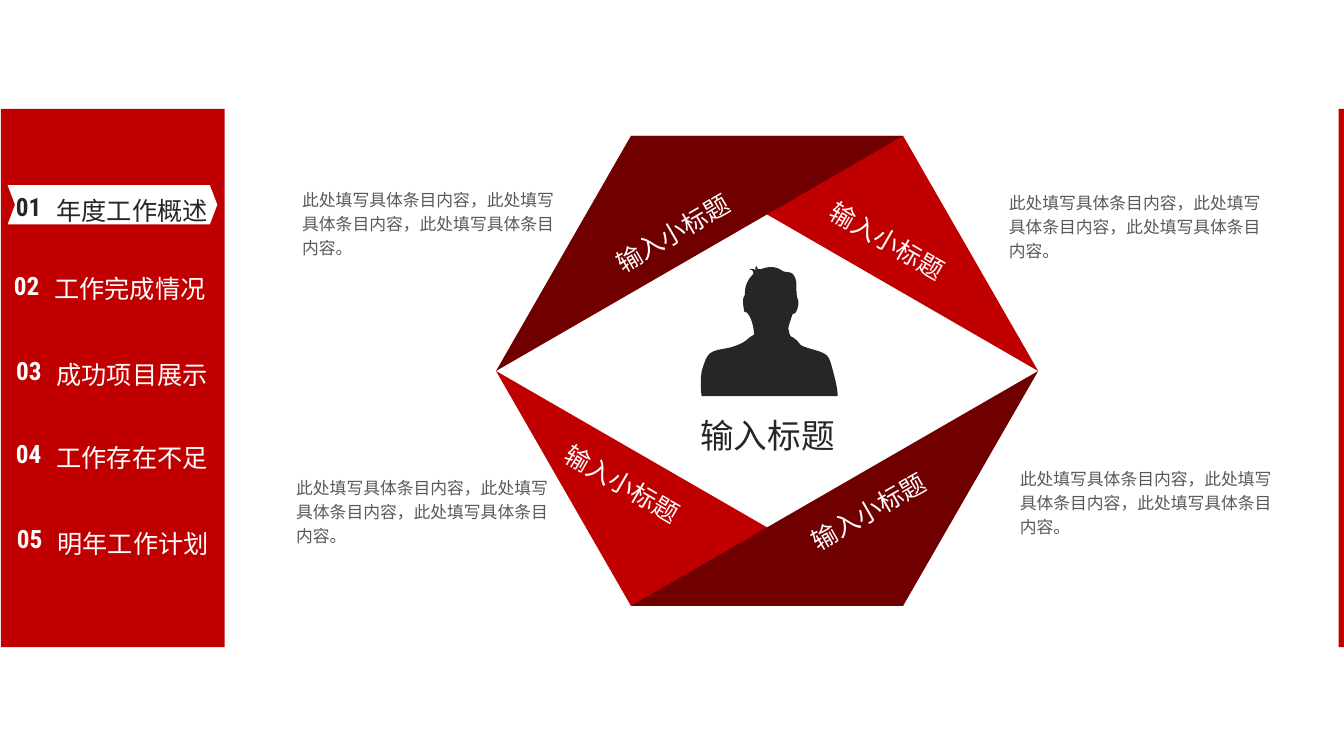
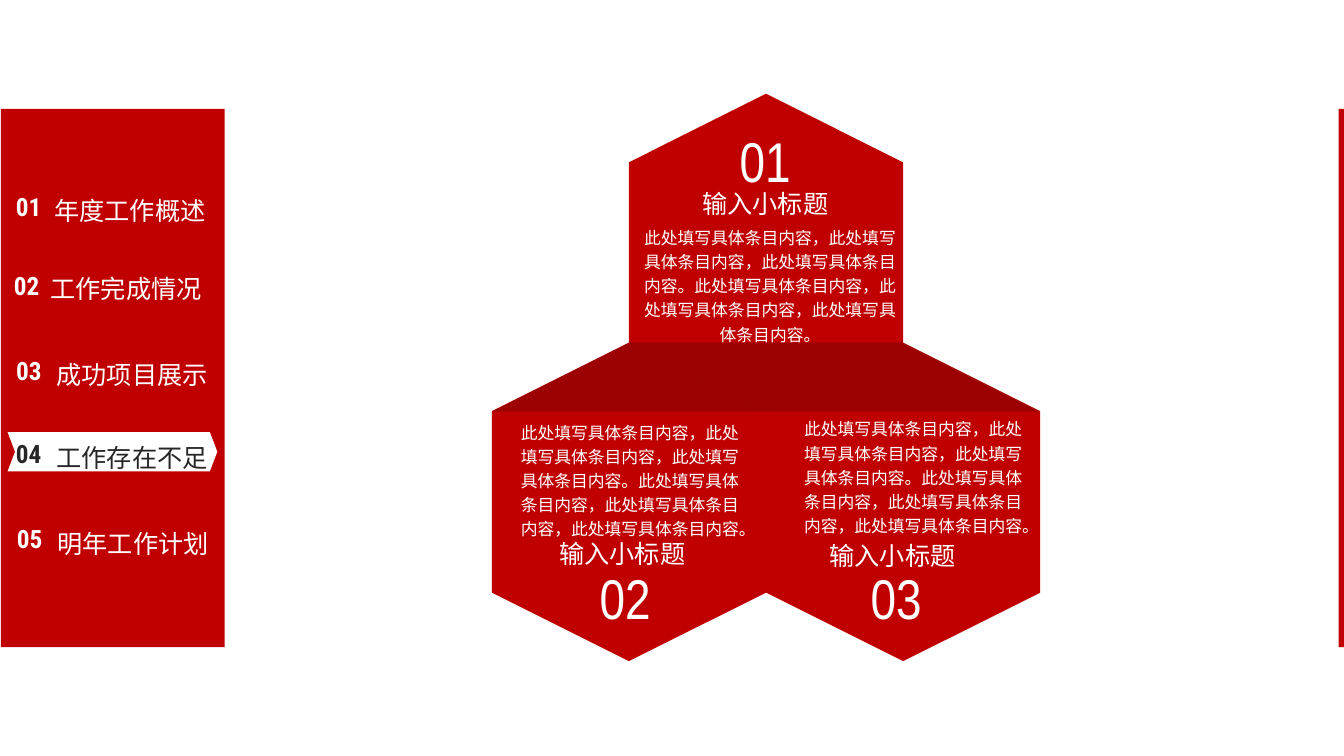
from dataclasses import dataclass
from typing import NamedTuple

import lxml.etree
import pptx
import pptx.dml.color
import pptx.enum.shapes
import pptx.enum.text
import pptx.oxml.ns
import pptx.shapes.autoshape
import pptx.shapes.base
import pptx.slide
import pptx.util

Pt = pptx.util.Pt
Slide = pptx.slide.Slide
Shape = pptx.shapes.autoshape.Shape
Preset = pptx.enum.shapes.MSO_SHAPE
Align = pptx.enum.text.PP_ALIGN
qn = pptx.oxml.ns.qn


class Spot(NamedTuple):
    x: float
    y: float


class Box(NamedTuple):
    x: float
    y: float
    w: float
    h: float


class Style(NamedTuple):
    font: dict
    para: dict = {}
    wrap: bool = True


def face(name: str, size: float, bold: bool = False) -> dict:
    return {"name": name, "size": Pt(size), "bold": bold}


@dataclass(frozen=True)
class Theme:
    red: str = "C00000"
    maroon: str = "700000"
    dark: str = "262626"
    grey: str = "595959"
    shade: str = "0D0D0D"
    white: str = "FFFFFF"
    index = Style(face("Roboto Condensed", 18, True))
    label = Style(face("Open Sans", 18), {"alignment": Align.CENTER, "line_spacing": 1.5})
    head = Style(face("Noto Sans CJK SC", 24), {"alignment": Align.CENTER})
    sub = Style(face("Noto Sans CJK SC", 18))
    tilt = Style(face("Noto Sans CJK SC", 18), wrap=False)
    body = Style(face("Calibri", 12), {"line_spacing": 1.2})
    mid = Style(face("Calibri", 12), {"alignment": Align.CENTER, "line_spacing": 1.2})
    digit = Style(face("Arial Narrow", 40), wrap=False)


class Entry(NamedTuple):
    text: str
    index: Spot
    label: Spot


class Note(NamedTuple):
    body: Spot
    head: Spot
    angle: float


class Cell(NamedTuple):
    hexagon: Spot
    digit: Box
    head: Spot
    body: Box


THEME = Theme()
WIDTH, HEIGHT = 960, 540
BAR = Box(0.7, 77.8, 159.8, 384.5)
EDGE = Box(956.2, 77.8, 3.8, 384.5)
HEAD = "输入小标题"
LINE = "此处填写具体条目内容，此处填写具体条目内容，此处填写具体条目内容。"

MENU = [
    Entry("年度工作概述", Spot(4.3, 133.2), Spot(20.9, 125.3)),
    Entry("工作完成情况", Spot(2.9, 189.4), Spot(19.4, 180.7)),
    Entry("成功项目展示", Spot(4.5, 250.1), Spot(20.9, 242.6)),
    Entry("工作存在不足", Spot(4.3, 309.6), Spot(20.9, 301.7)),
    Entry("明年工作计划", Spot(5, 370.1), Spot(21.6, 362.9)),
]

NOTES = [
    Note(Spot(208.8, 128.9), Spot(428.4, 151.9), 330),
    Note(Spot(713.5, 131), Spot(581.8, 157.7), 30),
    Note(Spot(721.4, 328.3), Spot(568.1, 350.6), 330),
    Note(Spot(204.5, 334.8), Spot(392.4, 331.2), 30),
]

CELLS = [
    Cell(Spot(433.4, 82.8), Box(521.3, 87.1, 51.8, 55.4), Spot(494.6, 131),
         Box(449.3, 156.2, 201.6, 94.3)),
    Cell(Spot(335.5, 260.6), Box(421.2, 398.9, 56.9, 55.4), Spot(392.4, 380.9),
         Box(360, 295.2, 180, 94.3)),
    Cell(Spot(531.4, 260.6), Box(614.9, 398.9, 57.6, 55.4), Spot(585.4, 382.3),
         Box(562.3, 293, 180, 94.3)),
]

# Outline of the bust: a start, then two handles and an end for each curve.
BUST = Spot(499, 190.1)
UNIT = 0.72
START = (3, 129)
CURVES = [
    (3, 129, 0, 109, 5, 98), (9, 86, 12, 84, 25, 82), (39, 80, 47, 74, 48, 73),
    (50, 71, 53, 69, 55, 68), (55, 68, 55, 54, 48, 46), (48, 46, 45, 46, 45, 44),
    (45, 42, 43, 34, 45, 30), (45, 30, 46, 29, 46, 28), (46, 26, 45, 17, 54, 8),
    (54, 8, 56, 4, 50, 3), (50, 3, 53, 2, 57, 4), (57, 4, 55, 1, 58, 0),
    (58, 0, 57, 4, 62, 3), (67, 1, 73, 0, 78, 2), (82, 3, 83, 6, 89, 6),
    (95, 6, 97, 14, 97, 17), (97, 19, 97, 30, 98, 32), (99, 33, 99, 35, 99, 37),
    (99, 40, 97, 47, 95, 47), (94, 47, 93, 48, 93, 48), (93, 49, 89, 59, 89, 62),
    (90, 65, 90, 69, 92, 70), (95, 71, 99, 75, 101, 78), (103, 80, 115, 83, 121, 85),
    (127, 88, 129, 88, 132, 99), (135, 110, 138, 121, 138, 129),
]


def rgb(color: str) -> pptx.dml.color.RGBColor:
    return pptx.dml.color.RGBColor.from_string(color)


def paint(shape: Shape, color: str) -> Shape:
    shape.shadow.inherit = False
    shape.fill.solid()
    shape.fill.fore_color.rgb = rgb(color)
    shape.line.fill.background()
    return shape


def block(slide: Slide, kind: Preset, box: Box, color: str) -> Shape:
    return paint(slide.shapes.add_shape(kind, *map(Pt, box)), color)


def trace(slide: Slide, dots: list[Spot], color: str) -> Shape:
    """Fill the closed outline through the dots."""
    first, *rest = [(Pt(dot.x), Pt(dot.y)) for dot in dots]
    pen = slide.shapes.build_freeform(*first)
    pen.add_line_segments(rest, close=True)
    return paint(pen.convert_to_shape(), color)


def fade(shape: Shape, alpha: int) -> None:
    """Give the fill an opacity in percent."""
    tint = shape.fill._xPr.find(".//" + qn("a:srgbClr"))
    lxml.etree.SubElement(tint, qn("a:alpha"), val=str(alpha * 1000))


def write(slide: Slide, text: str, box: Box, style: Style, color: str,
          angle: float = 0) -> None:
    shape = slide.shapes.add_textbox(*map(Pt, box))
    shape.rotation = angle
    frame = shape.text_frame
    frame.word_wrap = style.wrap
    frame.auto_size = pptx.enum.text.MSO_AUTO_SIZE.SHAPE_TO_FIT_TEXT
    para = frame.paragraphs[0]
    run = para.add_run()
    run.text = text
    for target, values in ((para, style.para), (run.font, style.font)):
        for key, value in values.items():
            setattr(target, key, value)
    run.font.color.rgb = rgb(color)
    props = run._r.get_or_add_rPr()
    lxml.etree.SubElement(props, qn("a:ea"), typeface=style.font["name"])


def curve(start: tuple, ends: tuple, steps: int = 6) -> list[tuple]:
    """Sample a cubic curve, without its start."""
    dots = [start, ends[:2], ends[2:4], ends[4:]]
    out = []
    for step in range(1, steps + 1):
        t = step / steps
        u = 1 - t
        parts = (u ** 3, 3 * u * u * t, 3 * u * t * t, t ** 3)
        out.append(tuple(sum(p * dot[axis] for p, dot in zip(parts, dots))
                         for axis in (0, 1)))
    return out


def bust(slide: Slide) -> None:
    dots = [START]
    for ends in CURVES:
        dots += curve(dots[-1], ends)
    trace(slide, [Spot(BUST.x + x * UNIT, BUST.y + y * UNIT) for x, y in dots],
          THEME.dark)


def frame(deck: pptx.presentation.Presentation, active: int,
          shifts: tuple = (0, 0, 0, 0, 0)) -> Slide:
    """Add a slide with the side menu, one entry marked, and the right edge."""
    slide = deck.slides.add_slide(deck.slide_layouts[6])
    block(slide, Preset.RECTANGLE, BAR, THEME.red)
    mark = Box(5.4, MENU[active].index.y - 1, 149.8, 28.1)
    block(slide, Preset.CHEVRON, mark, THEME.white).adjustments[0] = 0.19
    for row, (entry, shift) in enumerate(zip(MENU, shifts)):
        color = THEME.dark if row == active else THEME.white
        write(slide, f"{row + 1:02}", Box(*entry.index, 40.3, 28.8), THEME.index, color)
        spot = Box(entry.label.x + shift, entry.label.y, 146.9, 36)
        write(slide, entry.text, spot, THEME.label, color)
    block(slide, Preset.RECTANGLE, EDGE, THEME.red)
    return slide


def profile(deck: pptx.presentation.Presentation) -> None:
    slide = frame(deck, 0)
    west, east = Spot(354.3, 265), Spot(741.6, 265)
    nw, ne = Spot(450.7, 97), Spot(645.1, 97)
    sw, se = Spot(450.7, 432.8), Spot(645.1, 432.8)
    trace(slide, [ne, east, se, sw, west, nw], THEME.white)
    for dots, color in (
        ([ne, nw, east], THEME.red),
        ([ne, nw, west], THEME.maroon),
        ([west, sw, se], THEME.red),
        ([east, sw, se], THEME.maroon),
    ):
        trace(slide, dots, color)
    bust(slide)
    write(slide, "输入标题", Box(469.4, 293, 157.7, 36), THEME.head, THEME.dark)
    for note in NOTES:
        write(slide, HEAD, Box(*note.head, 105.1, 28.8), THEME.tilt,
              THEME.white, note.angle)
        write(slide, LINE, Box(*note.body, 199.4, 59.8), THEME.body, THEME.grey)


def issues(deck: pptx.presentation.Presentation) -> None:
    slide = frame(deck, 3, (-1.5, -2.8, 0, 0, 0))
    for cell in CELLS:
        shape = block(slide, Preset.HEXAGON, Box(*cell.hexagon, 227.5, 195.8), THEME.red)
        shape.rotation = 270
    half, top, low = 97.9, 244.8, 294
    center = 547.2
    for x, tip, base in (
        (center + half, top, low),
        (center - half, top, low),
        (center, low, top),
    ):
        fold = [Spot(x, tip), Spot(x + half, base), Spot(x - half, base)]
        fade(trace(slide, fold, THEME.shade), 20)
    for number, cell in enumerate(CELLS, 1):
        write(slide, f"{number:02}", cell.digit, THEME.digit, THEME.white)
        write(slide, HEAD, Box(*cell.head, 157.7, 28.8), THEME.sub, THEME.white)
        write(slide, LINE * 2, cell.body, THEME.mid, THEME.white)


def main() -> None:
    deck = pptx.Presentation()
    deck.slide_width, deck.slide_height = Pt(WIDTH), Pt(HEIGHT)
    profile(deck)
    issues(deck)
    deck.save("out.pptx")


if __name__ == "__main__":
    main()
